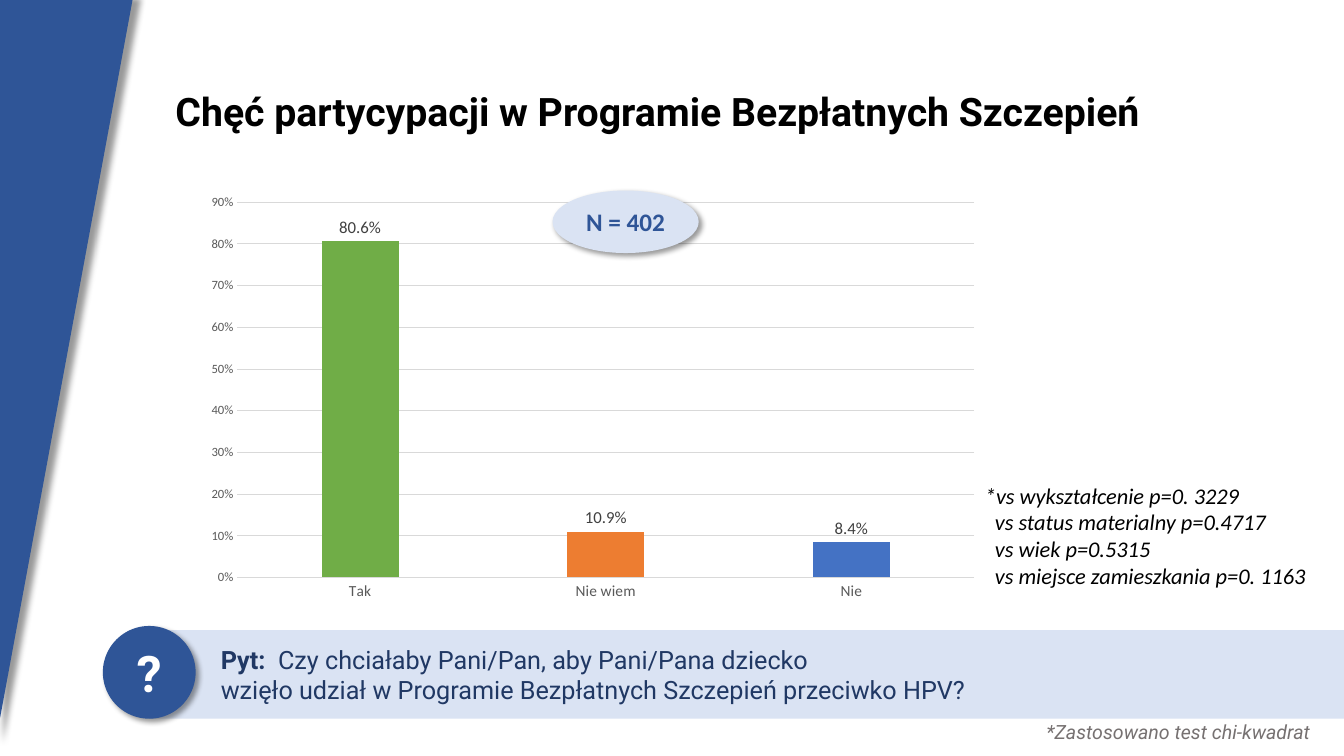
"""Build the slide on willingness to join the free vaccination programme."""
from pptx import Presentation
from pptx.chart.data import CategoryChartData
from pptx.dml.color import RGBColor
from pptx.enum.chart import XL_CHART_TYPE as CT, XL_LABEL_POSITION as LP, XL_TICK_MARK as TM
from pptx.enum.shapes import MSO_SHAPE as SH
from pptx.enum.text import MSO_ANCHOR as MA, PP_ALIGN as AL
from pptx.oxml import parse_xml
from pptx.oxml.ns import nsdecls, qn
from pptx.util import Inches, Pt

TITLE = "Chęć partycypacji w Programie Bezpłatnych Szczepień"
ANSWERS = [("Tak", 0.806, "70AD47"), ("Nie wiem", 0.109, "ED7D31"), ("Nie", 0.084, "4472C4")]
SAMPLE = "N = 402"
TESTS = ["*vs wykształcenie p=0. 3229", "vs status materialny p=0.4717",
         "vs wiek p=0.5315", "vs miejsce zamieszkania p=0. 1163"]
QUESTION_LABEL = "Pyt:  "
QUESTION = ["Czy chciałaby Pani/Pan, aby Pani/Pana dziecko ",
            "wzięło udział w Programie Bezpłatnych Szczepień przeciwko HPV?"]
FOOTNOTE = "*Zastosowano test chi-kwadrat"
BLUE, PALE, NAVY, GRID = "2F5597", "DAE3F3", "203864", "D9D9D9"


def rgb(value):
    return RGBColor.from_string(value)


def box(*lengths):
    return [Inches(v) for v in lengths]


def style(font, size, color, name="Calibri", bold=False, italic=False):
    font.size, font.name, font.bold, font.italic = Pt(size), name, bold, italic
    font.color.rgb = rgb(color)


def add_run(p, text, *args, **kwargs):
    r = p.add_run()
    r.text = text
    style(r.font, *args, **kwargs)


def paint(shape, color, shadow=None):
    shape.fill.solid()
    shape.fill.fore_color.rgb = rgb(color)
    shape.line.fill.background()
    shape.shadow.inherit = False
    if shadow:
        shape._element.spPr.find(qn("a:effectLst")).append(parse_xml(
            f'<a:outerShdw {nsdecls("a")} blurRad="{Pt(4)}" dist="{Pt(shadow)}" dir="2700000" '
            'algn="tl" rotWithShape="0"><a:srgbClr val="000000"><a:alpha val="40000"/>'
            '</a:srgbClr></a:outerShdw>'))


def add_badge(s, place, color, text, *args):
    badge = s.shapes.add_shape(SH.OVAL, *box(*place))
    paint(badge, color, 3)
    tf = badge.text_frame
    tf.vertical_anchor = MA.MIDDLE
    tf.paragraphs[0].alignment = AL.CENTER
    add_run(tf.paragraphs[0], text, *args, bold=True)


def add_answers(s):
    data = CategoryChartData(number_format="0.0%")
    data.categories = [a[0] for a in ANSWERS]
    data.add_series("Series 1", [a[1] for a in ANSWERS])
    chart = s.shapes.add_chart(CT.COLUMN_CLUSTERED, *box(1.94, 1.85, 7.88, 4.19), data).chart
    chart.has_legend = chart.has_title = False
    style(chart.font, 10, "000000")
    plot = chart.plots[0]
    plot.gap_width, plot.overlap, plot.vary_by_categories = 219, -27, False
    for i, (_, _, color) in enumerate(ANSWERS):
        fill = plot.series[0].points[i].format.fill
        fill.solid()
        fill.fore_color.rgb = rgb(color)
    plot.has_data_labels = True
    labels = plot.data_labels
    labels.show_value, labels.position = True, LP.OUTSIDE_END
    labels.number_format, labels.number_format_is_linked = "0.0%", False
    style(labels.font, 12, "404040")
    cat, val = chart.category_axis, chart.value_axis
    for axis, size in ((cat, 11), (val, 9)):
        axis.major_tick_mark = axis.minor_tick_mark = TM.NONE
        style(axis.tick_labels.font, size, "595959")
    val.minimum_scale, val.maximum_scale, val.major_unit = 0, 0.9, 0.1
    val.tick_labels.number_format, val.tick_labels.number_format_is_linked = "0%", False
    val.format.line.fill.background()
    for line in (cat.format.line, val.major_gridlines.format.line):
        line.color.rgb, line.width = rgb(GRID), Pt(0.75)


def add_question(s):
    band = s.shapes.add_shape(SH.RECTANGLE, *box(1.48, 6.25, 11.85, 0.88))
    paint(band, PALE)
    tf = band.text_frame
    tf.margin_left, tf.vertical_anchor = Inches(0.71), MA.MIDDLE
    p = tf.paragraphs[0]
    p.alignment = AL.LEFT
    add_run(p, QUESTION_LABEL, 18, NAVY, "Roboto", bold=True)
    for i, line in enumerate(QUESTION):
        if i:
            p.add_line_break()
        add_run(p, line, 18, NAVY, "Roboto")


def add_tests(s):
    tf = s.shapes.add_textbox(*box(9.67, 4.73, 3.48, 1.48)).text_frame
    tf.word_wrap = True
    for i, line in enumerate(TESTS):
        p = tf.add_paragraph() if i else tf.paragraphs[0]
        if i:
            p._p.get_or_add_pPr().set("marL", str(Inches(0.1)))
        add_run(p, line, 16, "000000", italic=True)


def main():
    prs = Presentation()
    prs.slide_width, prs.slide_height = box(13.33, 7.5)
    s = prs.slides.add_slide(prs.slide_layouts[5])
    title = s.shapes.title
    title.left, title.top, title.width, title.height = box(1.64, 0.4, 10.39, 1.45)
    title.text_frame.vertical_anchor = MA.MIDDLE
    p = title.text_frame.paragraphs[0]
    p.alignment, p.line_spacing = AL.LEFT, 0.9
    add_run(p, TITLE, 28, "000000", "Roboto", bold=True)

    add_answers(s)
    note = s.shapes.add_textbox(*box(10.28, 7.09, 2.92, 0.34)).text_frame
    note.word_wrap = False
    add_run(note.paragraphs[0], FOOTNOTE, 14, "767171", "Roboto", italic=True)

    wedge = s.shapes.build_freeform(*box(1.33, -0.08))
    wedge.add_line_segments([box(-0.03, -0.08), box(-0.03, 7.29)], close=True)
    paint(wedge.convert_to_shape(), BLUE, 6)

    add_question(s)
    add_badge(s, (1.02, 6.21, 0.92, 0.92), BLUE, "?", 36, "FFFFFF", "Roboto")
    add_badge(s, (5.48, 1.89, 1.45, 0.62), PALE, SAMPLE, 18, BLUE)
    add_tests(s)
    prs.save("out.pptx")


if __name__ == "__main__":
    main()
